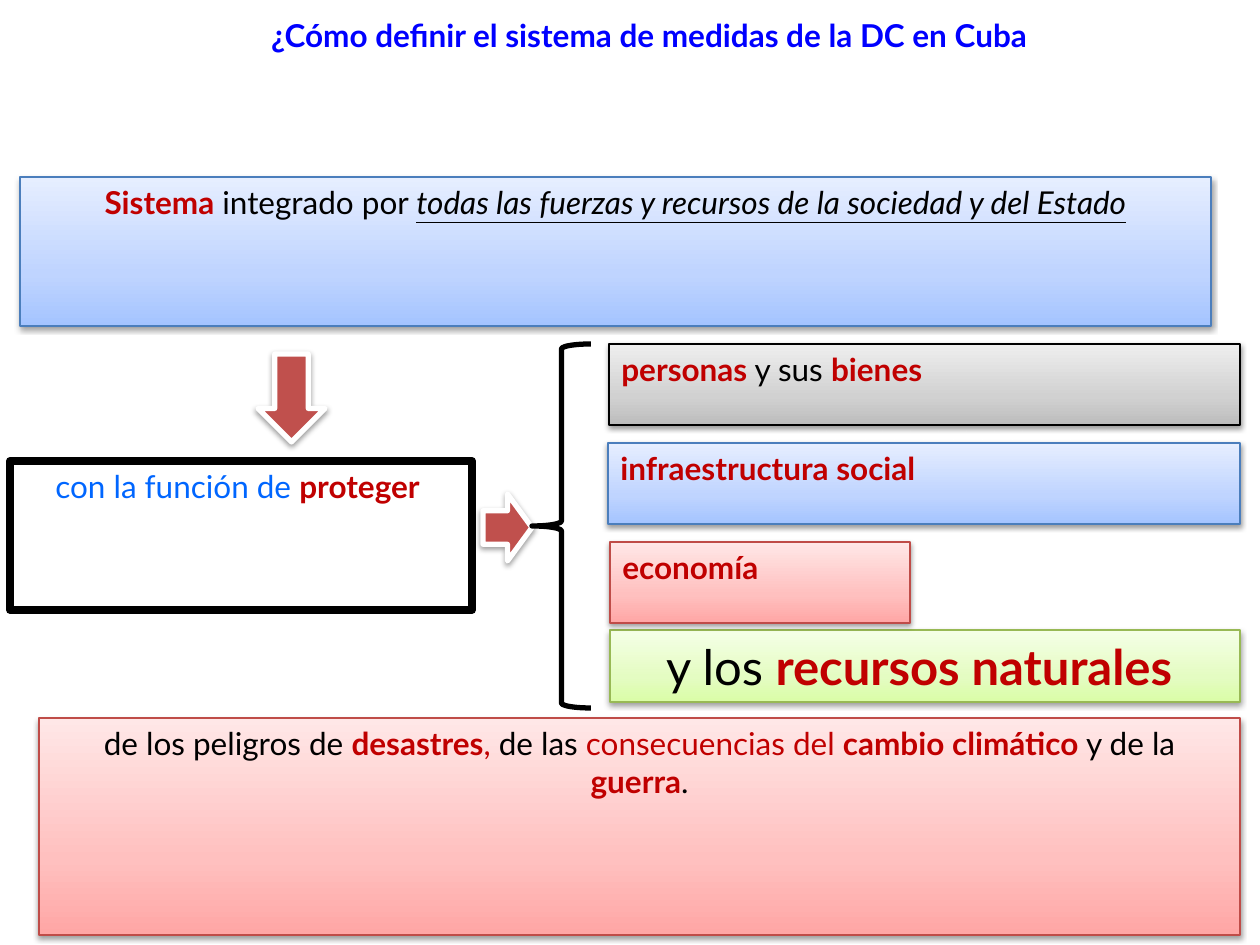
import copy

import lxml.etree
import pptx
import pptx.dml.color
import pptx.enum.shapes
import pptx.enum.text
import pptx.oxml.ns
import pptx.util

RGBColor = pptx.dml.color.RGBColor
Shapes = pptx.enum.shapes.MSO_SHAPE
Align = pptx.enum.text.PP_ALIGN

PIXELS_PER_INCH = 126
FONT = "Lato"
BLACK = RGBColor(0x00, 0x00, 0x00)
WHITE = RGBColor(0xFF, 0xFF, 0xFF)
DARK_RED = RGBColor(0xC0, 0x00, 0x00)
TITLE_BLUE = RGBColor(0x00, 0x00, 0xFF)
TEXT_BLUE = RGBColor(0x00, 0x66, 0xFF)
ARROW_RED = RGBColor(0xC0, 0x50, 0x4D)
BLUE_LINE = RGBColor(0x4B, 0x7E, 0xBC)
RED_LINE = RGBColor(0xBF, 0x4C, 0x48)
GREEN_LINE = RGBColor(0x98, 0xB9, 0x55)
BLUE_STOPS = (RGBColor(0xA4, 0xC4, 0xFF), RGBColor(0xBF, 0xD4, 0xFF), RGBColor(0xE6, 0xEE, 0xFF))
RED_STOPS = (RGBColor(0xFF, 0xA6, 0xA5), RGBColor(0xFF, 0xC0, 0xBF), RGBColor(0xFF, 0xE7, 0xE7))
GREEN_STOPS = (RGBColor(0xDA, 0xFD, 0xA7), RGBColor(0xE4, 0xFC, 0xC2), RGBColor(0xF5, 0xFF, 0xE7))
GRAY_STOPS = (RGBColor(0xBD, 0xBD, 0xBD), RGBColor(0xD1, 0xD1, 0xD1), RGBColor(0xEE, 0xEE, 0xEE))
STOP_POSITIONS = (0, 0.35, 1)


def px(length):
    return round(length * pptx.util.Inches(1) / PIXELS_PER_INCH)


def plain(text, color=BLACK):
    return text, color, {}


def strong(text, color=DARK_RED):
    return text, color, {"bold": True}


def write(shape, runs, size=18, align=Align.CENTER, wrap=True):
    frame = shape.text_frame
    frame.word_wrap = wrap
    frame.auto_size = pptx.enum.text.MSO_AUTO_SIZE.NONE
    frame.vertical_anchor = pptx.enum.text.MSO_ANCHOR.TOP
    paragraph = frame.paragraphs[0]
    paragraph.alignment = align
    for text, color, style in runs:
        run = paragraph.add_run()
        run.text = text
        run.font.name = FONT
        run.font.size = pptx.util.Pt(size)
        run.font.color.rgb = color
        run.font.bold = style.get("bold", False)
        run.font.italic = style.get("italic", False)
        run.font.underline = style.get("underline", False)


def set_line(shape, color, width):
    shape.line.color.rgb = color
    shape.line.width = pptx.util.Pt(width)


def add_shadow(shape):
    qn = pptx.oxml.ns.qn
    effects = shape._element.spPr.find(qn("a:effectLst"))
    shadow = lxml.etree.SubElement(
        effects, qn("a:outerShdw"), blurRad="40000", dist="20000", dir="5400000", rotWithShape="0"
    )
    color = lxml.etree.SubElement(shadow, qn("a:srgbClr"), val=str(BLACK))
    lxml.etree.SubElement(color, qn("a:alpha"), val="38000")


def add_outline(slide, kind, bounds, line, width):
    shape = slide.shapes.add_shape(kind, *map(px, bounds))
    shape.shadow.inherit = False
    shape.fill.background()
    set_line(shape, line, width)
    return shape


def add_gradient_box(slide, bounds, stops, line):
    shape = add_outline(slide, Shapes.RECTANGLE, bounds, line, 0.75)
    shape.fill.gradient()
    shape.fill.gradient_angle = 90
    stop_list = shape._element.spPr.find(".//" + pptx.oxml.ns.qn("a:gsLst"))
    stop_list.append(copy.deepcopy(stop_list[0]))
    for stop, position, color in zip(shape.fill.gradient_stops, STOP_POSITIONS, stops):
        stop.position = position
        stop.color.rgb = color
    add_shadow(shape)
    return shape


def add_arrow(slide, bounds, rotation=0):
    arrow = add_outline(slide, Shapes.DOWN_ARROW, bounds, WHITE, 3)
    arrow.fill.solid()
    arrow.fill.fore_color.rgb = ARROW_RED
    arrow.rotation = rotation
    add_shadow(arrow)


def add_title(slide, text):
    title = slide.shapes.title
    title.left, title.top, title.width, title.height = map(px, (29, 10, 1201, 149))
    set_line(title, WHITE, 4.5)
    write(title, [strong(text, TITLE_BLUE)])
    title.text_frame.margin_left = px(52)


def add_protected_items(slide):
    items = [
        ((609, 631), GRAY_STOPS, BLACK, [strong("personas"), plain(" y sus "), strong("bienes")]),
        ((608, 632), BLUE_STOPS, BLUE_LINE, [strong("infraestructura social")]),
        ((610, 300), RED_STOPS, RED_LINE, [strong("economía")]),
    ]
    for index, ((left, width), stops, line, runs) in enumerate(items):
        box = add_gradient_box(slide, (left, 344 + 99 * index, width, 81), stops, line)
        write(box, runs, align=Align.LEFT, wrap=False)


def main():
    presentation = pptx.Presentation()
    presentation.slide_width = px(1260)
    presentation.slide_height = px(945)
    slide = presentation.slides.add_slide(presentation.slide_layouts[5])

    add_title(slide, "¿Cómo definir el sistema de medidas de la DC en Cuba")

    dangers = add_gradient_box(slide, (39, 718, 1201, 217), RED_STOPS, RED_LINE)
    write(dangers, [
        plain("de los peligros de "),
        strong("desastres"),
        plain(",", DARK_RED),
        plain(" de las "),
        plain("consecuencias del ", DARK_RED),
        strong("cambio climático "),
        plain("y de la "),
        strong("guerra"),
        plain("."),
    ])

    system = add_gradient_box(slide, (20, 177, 1191, 149), BLUE_STOPS, BLUE_LINE)
    write(system, [
        strong("Sistema"),
        plain(" integrado por "),
        ("todas las fuerzas y recursos de la sociedad y del Estado", BLACK,
         {"italic": True, "underline": True}),
    ])

    function = add_outline(slide, Shapes.RECTANGLE, (10, 461, 462, 149), BLACK, 4.5)
    write(function, [plain("con la función de ", TEXT_BLUE), strong("proteger ")])

    resources = add_gradient_box(slide, (610, 630, 630, 72), GREEN_STOPS, GREEN_LINE)
    write(resources, [plain("y los "), strong("recursos naturales ")], size=28)

    add_arrow(slide, (258, 354, 67, 88))
    add_arrow(slide, (474, 503, 67, 49), rotation=270)
    add_protected_items(slide)
    add_outline(slide, Shapes.LEFT_BRACE, (532, 344, 59, 364), BLACK, 3)

    presentation.save("out.pptx")


if __name__ == "__main__":
    main()
